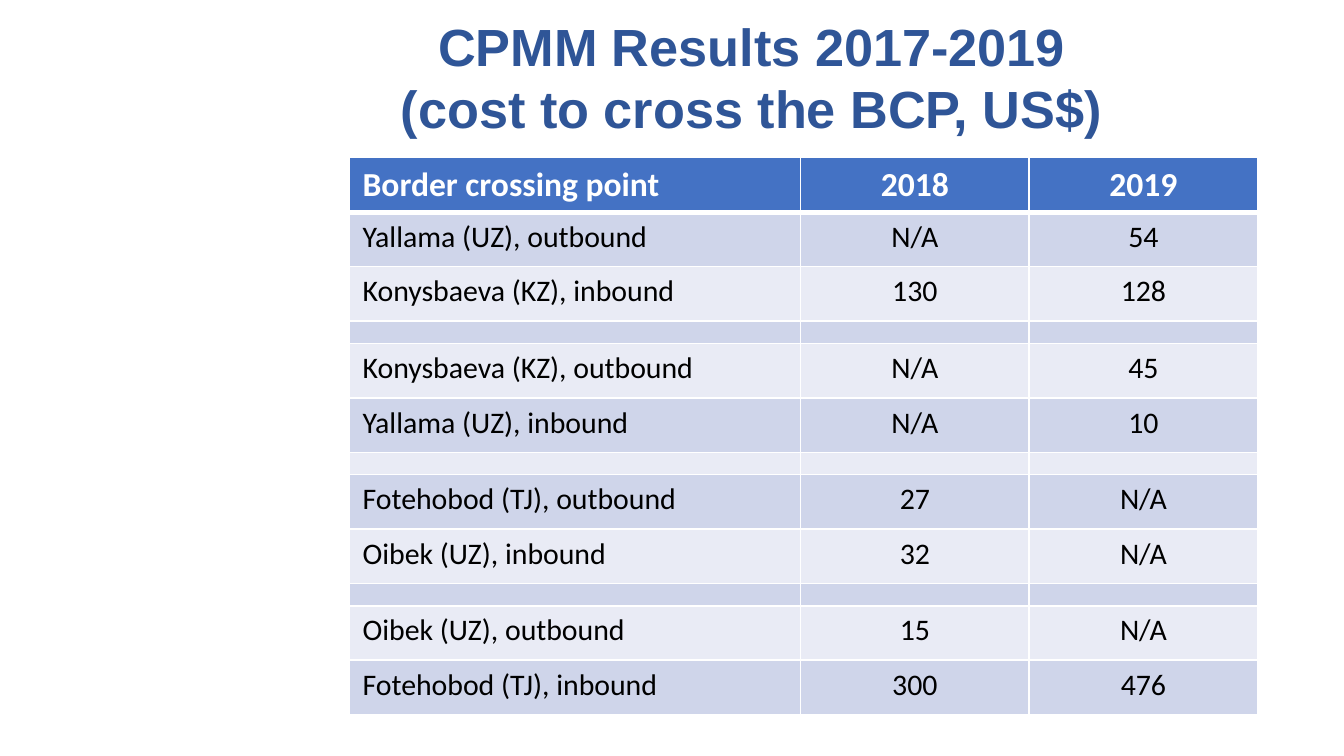
from typing import NamedTuple

from lxml.etree import SubElement
from pptx import Presentation
from pptx.dml.color import RGBColor
from pptx.enum.text import MSO_ANCHOR, MSO_AUTO_SIZE, PP_ALIGN
from pptx.oxml.ns import qn
from pptx.util import Cm, Pt

WHITE, BLACK, TITLE_BLUE, HEADER_BLUE = "FFFFFF", "000000", "2F5597", "4472C4"
BANDS = ("E9EBF5", "CFD5EA")
COLUMN_WIDTHS = (8.53, 4.32, 4.32)
ROW_HEIGHT, GAP_HEIGHT = 1.03, 0.42


class Crossing(NamedTuple):
    point: str
    cost_2018: str
    cost_2019: str


HEADER = Crossing("Border crossing point", "2018", "2019")
GAP = Crossing("", "", "")
ROWS = (
    HEADER,
    Crossing("Yallama (UZ), outbound", "N/A", "54"),
    Crossing("Konysbaeva (KZ), inbound", "130", "128"),
    GAP,
    Crossing("Konysbaeva (KZ), outbound", "N/A", "45"),
    Crossing("Yallama (UZ), inbound", "N/A", "10"),
    GAP,
    Crossing("Fotehobod (TJ), outbound", "27", "N/A"),
    Crossing("Oibek (UZ), inbound", "32", "N/A"),
    GAP,
    Crossing("Oibek (UZ), outbound", "15", "N/A"),
    Crossing("Fotehobod (TJ), inbound", "300", "476"),
)


def color(value: str) -> RGBColor:
    return RGBColor.from_string(value)


def format_spans(para, font: str, size: int, text_color: str, bold: bool) -> None:
    for span in para.runs:
        span.font.name = font
        span.font.size = Pt(size)
        span.font.bold = bold
        span.font.color.rgb = color(text_color)


def add_borders(cell, bottom_width: int) -> None:
    properties = cell._tc.get_or_add_tcPr()
    for side, width in (("L", 1), ("R", 1), ("T", 1), ("B", bottom_width)):
        line = SubElement(properties, qn(f"a:ln{side}"), w=str(Pt(width)))
        fill = SubElement(line, qn("a:solidFill"))
        SubElement(fill, qn("a:srgbClr"), val=WHITE)


def shrink_empty(cell) -> None:
    """Keep an empty cell from forcing its row taller."""
    cell.margin_top = cell.margin_bottom = 0
    SubElement(cell.text_frame.paragraphs[0]._p, qn("a:endParaRPr"), sz="400")


def add_title(page) -> None:
    box = page.shapes.title
    box.left, box.top, box.width, box.height = Cm(6.96), Cm(0.36), Cm(14.48), Cm(2.18)
    frame = box.text_frame
    frame.text = "CPMM Results 2017-2019 (cost to cross the BCP, US$)"
    frame.word_wrap = True
    frame.auto_size = MSO_AUTO_SIZE.NONE
    frame.vertical_anchor = MSO_ANCHOR.MIDDLE
    para = frame.paragraphs[0]
    para.alignment = PP_ALIGN.CENTER
    format_spans(para, "Arial", 28, TITLE_BLUE, True)


def add_cost_table(page) -> None:
    heights = [ROW_HEIGHT if row.point else GAP_HEIGHT for row in ROWS]
    table = page.shapes.add_table(
        len(ROWS), len(COLUMN_WIDTHS), Cm(6.6), Cm(2.98),
        Cm(sum(COLUMN_WIDTHS)), Cm(sum(heights)),
    ).table
    for column, width in zip(table.columns, COLUMN_WIDTHS):
        column.width = Cm(width)
    for row_index, (row, height) in enumerate(zip(ROWS, heights)):
        table.rows[row_index].height = Cm(height)
        is_header = row is HEADER
        for column_index, text in enumerate(row):
            cell = table.cell(row_index, column_index)
            # The thick rule under the header is shared with the row below it.
            add_borders(cell, 3 if is_header else 1)
            if row_index == 1:
                cell._tc.tcPr.find(qn("a:lnT")).set("w", str(Pt(3)))
            cell.fill.solid()
            cell.fill.fore_color.rgb = color(HEADER_BLUE if is_header else BANDS[row_index % 2])
            if not text:
                shrink_empty(cell)
                continue
            cell.text_frame.text = text
            para = cell.text_frame.paragraphs[0]
            para.alignment = PP_ALIGN.CENTER if column_index else PP_ALIGN.LEFT
            format_spans(para, "Calibri", 18 if is_header else 16,
                         WHITE if is_header else BLACK, is_header)


def main() -> None:
    deck = Presentation()
    deck.slide_width, deck.slide_height = Cm(25.4), Cm(14.29)
    page = deck.slides.add_slide(deck.slide_layouts.get_by_name("Title Only"))
    add_title(page)
    add_cost_table(page)
    deck.save("out.pptx")


if __name__ == "__main__":
    main()
